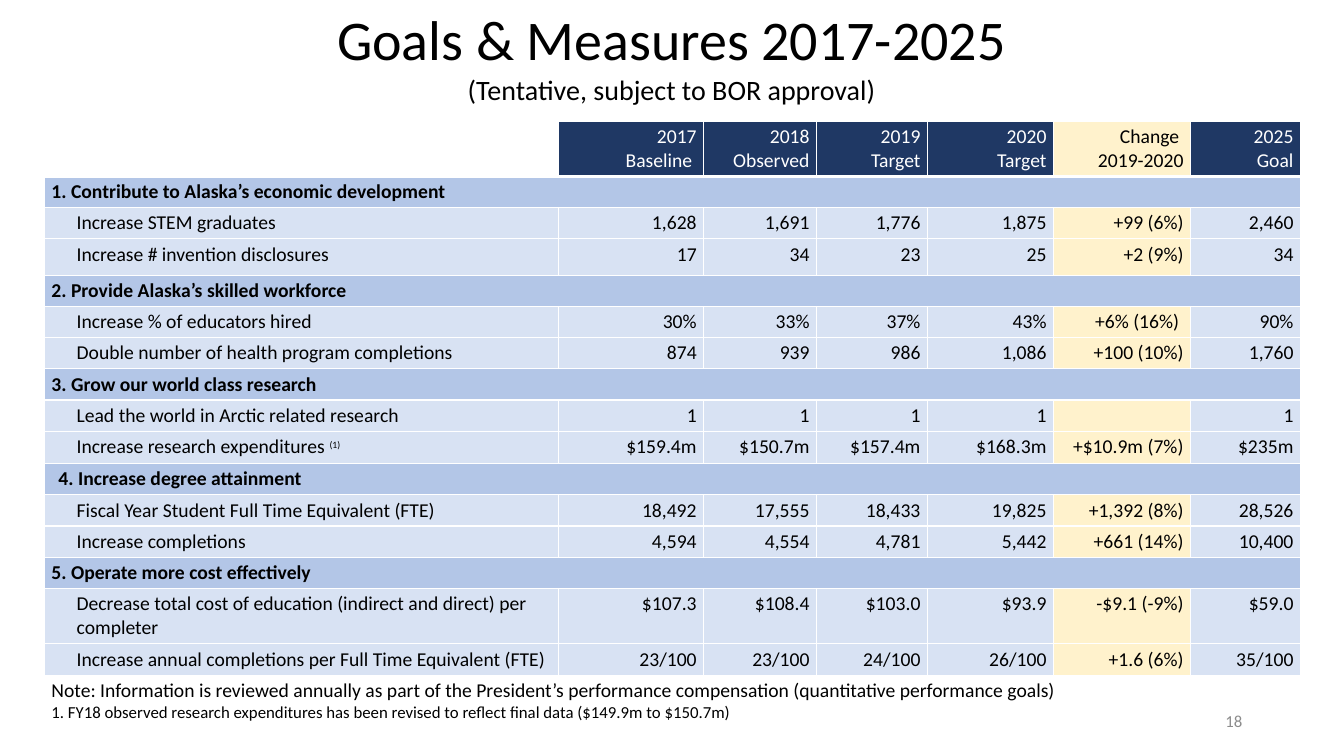
from pptx import Presentation
from pptx import util as u
from pptx.dml import color
from pptx.enum import text
from pptx.oxml import ns
from lxml import etree

FONT = "Calibri"
BLACK, WHITE, NAVY = "000000", "FFFFFF", "1F3864"
BAND, PALE, CREAM = "B3C6E7", "D8E2F3", "FFF2CC"
LEFT, MID, RIGHT = text.PP_ALIGN.LEFT, text.PP_ALIGN.CENTER, text.PP_ALIGN.RIGHT
CHANGE = 5

COLS = [5.1, 1.44, 1.12, 1.1, 1.25, 1.36, 1.09]
ROW = 0.31
TALL = {0: 0.55, 3: 0.36, 9: 0.32, 14: 0.55, 16: 0.5}

HEADS = ["", "2017\nBaseline ", "2018\nObserved", "2019\nTarget",
         "2020\nTarget", "Change \n2019-2020", "2025\nGoal"]
GOALS = [
    ("1. Contribute to Alaska’s economic development", 0, [
        ["Increase STEM graduates", "1,628", "1,691", "1,776", "1,875", "+99 (6%)", "2,460"],
        ["Increase # invention disclosures", "17", "34", "23", "25", "+2 (9%)", "34"]]),
    ("2. Provide Alaska’s skilled workforce", 0, [
        ["Increase % of educators hired", "30%", "33%", "37%", "43%", "+6% (16%) ", "90%"],
        ["Double number of health program completions",
         "874", "939", "986", "1,086", "+100 (10%)", "1,760"]]),
    ("3. Grow our world class research", 0, [
        ["Lead the world in Arctic related research", "1", "1", "1", "1", "", "1"],
        ["Increase research expenditures ^(1)",
         "$159.4m", "$150.7m", "$157.4m", "$168.3m", "+$10.9m (7%)", "$235m"]]),
    ("4. Increase degree attainment", 0.07, [
        ["Fiscal Year Student Full Time Equivalent (FTE)",
         "18,492", "17,555", "18,433", "19,825", "+1,392 (8%)", "28,526"],
        ["Increase completions", "4,594", "4,554", "4,781", "5,442", "+661 (14%)", "10,400"]]),
    ("5. Operate more cost effectively", 0, [
        ["Decrease total cost of education (indirect and direct) per completer",
         "$107.3", "$108.4", "$103.0", "$93.9", "-$9.1 (-9%)", "$59.0"],
        ["Increase annual completions per Full Time Equivalent (FTE)",
         "23/100", "23/100", "24/100", "26/100", "+1.6 (6%)", "35/100"]]),
]
NOTES = [
    ("Note: Information is reviewed annually as part of the President’s "
     "performance compensation (quantitative performance goals)", 14),
    ("1. FY18 observed research expenditures has been revised to reflect "
     "final data ($149.9m to $150.7m)", 12),
]


def rgb(code):
    return color.RGBColor.from_string(code)


def add_run(para, words, size, ink=BLACK, bold=False):
    run = para.add_run()
    run.text = words
    font = run.font
    font.name, font.size, font.bold = FONT, u.Pt(size), bold
    font.color.rgb = rgb(ink)
    return run


def write(frame, lines, align=LEFT, ink=BLACK, bold=False, indent=0):
    """Write (words, size) lines; words after ^ are superscript."""
    for i, (words, size) in enumerate(lines):
        para = frame.add_paragraph() if i else frame.paragraphs[0]
        para.alignment = align
        if indent:
            para._p.get_or_add_pPr().set("marL", str(u.Inches(indent)))
        base, _, mark = words.partition("^")
        if base:
            add_run(para, base, size, ink, bold)
        else:
            end = etree.SubElement(para._p, ns.qn("a:endParaRPr"))
            end.set("sz", str(size * 100))
        if mark:
            run = add_run(para, mark, 12, ink, bold)
            run.font._element.set("baseline", "30000")


def edge(cell, side, width):
    props = cell._tc.get_or_add_tcPr()
    line = etree.Element(ns.qn("a:ln" + side), w=str(u.Pt(width)))
    fill = etree.SubElement(line, ns.qn("a:solidFill"))
    etree.SubElement(fill, ns.qn("a:srgbClr"), val=WHITE)
    props.insert("LRTB".index(side), line)


def paint(cell, fill, top=1, base=1):
    cell.margin_left = cell.margin_right = u.Inches(0.07)
    cell.margin_top = cell.margin_bottom = u.Inches(0.036)
    if fill:
        cell.fill.solid()
        cell.fill.fore_color.rgb = rgb(fill)
    else:
        cell.fill.background()
    for side, width in zip("LRTB", (1, 1, top, base)):
        edge(cell, side, width)


def fill_head(cells):
    for c, (cell, label) in enumerate(zip(cells, HEADS)):
        shade = CREAM if c == CHANGE else NAVY if label else None
        paint(cell, shade, base=3)
        write(cell.text_frame, [(part, 14) for part in label.split("\n")],
              RIGHT, BLACK if c == CHANGE else WHITE)


def fill_wide(cells, lines, fill=None, top=1, bold=False, indent=0):
    """Merge a row into one cell and write in it."""
    cells[0].merge(cells[-1])
    for cell in cells:
        paint(cell, fill, top)
    write(cells[0].text_frame, lines, bold=bold, indent=indent)
    for cell in cells[1:]:
        write(cell.text_frame, [("", 12)])


def fill_row(cells, values):
    for c, (cell, value) in enumerate(zip(cells, values)):
        paint(cell, CREAM if c == CHANGE else PALE)
        write(cell.text_frame, [(value, 14)], RIGHT if c else LEFT,
              indent=0 if c else 0.25)


def add_goals(slide, x, y):
    count = 2 + sum(1 + len(rows) for _, _, rows in GOALS)
    highs = [TALL.get(r, ROW) for r in range(count)]
    table = slide.shapes.add_table(
        count, len(COLS), u.Inches(x), u.Inches(y),
        u.Inches(sum(COLS)), u.Inches(sum(highs))).table
    table.first_row = table.horz_banding = False
    for col, wide in zip(table.columns, COLS):
        col.width = u.Inches(wide)
    for row, high in zip(table.rows, highs):
        row.height = u.Inches(high)
    lines = iter([list(row.cells) for row in table.rows])
    fill_head(next(lines))
    for i, (goal, indent, rows) in enumerate(GOALS):
        fill_wide(next(lines), [(goal, 14)], BAND, 1 if i else 3, True, indent)
        for values in rows:
            fill_row(next(lines), values)
    fill_wide(next(lines), NOTES)


def add_label(slide, x, y, w, h, lines, align, ink=BLACK, anchor=text.MSO_ANCHOR.TOP):
    box = slide.shapes.add_textbox(*map(u.Inches, (x, y, w, h)))
    frame = box.text_frame
    frame.word_wrap = True
    frame.vertical_anchor = anchor
    write(frame, lines, align, ink)


def main():
    deck = Presentation()
    deck.slide_width, deck.slide_height = u.Inches(13.33), u.Inches(7.5)
    slide = deck.slides.add_slide(deck.slide_layouts[6])
    add_goals(slide, 0.44, 1.2)
    add_label(slide, 0.3, 0, 12.72, 1.25,
              [("Goals & Measures 2017-2025", 40),
               ("(Tentative, subject to BOR approval)", 20)], MID)
    add_label(slide, 9.42, 6.95, 3, 0.4, [("18", 12)], RIGHT, "8C8C8C",
              text.MSO_ANCHOR.MIDDLE)
    deck.save("out.pptx")


if __name__ == "__main__":
    main()
